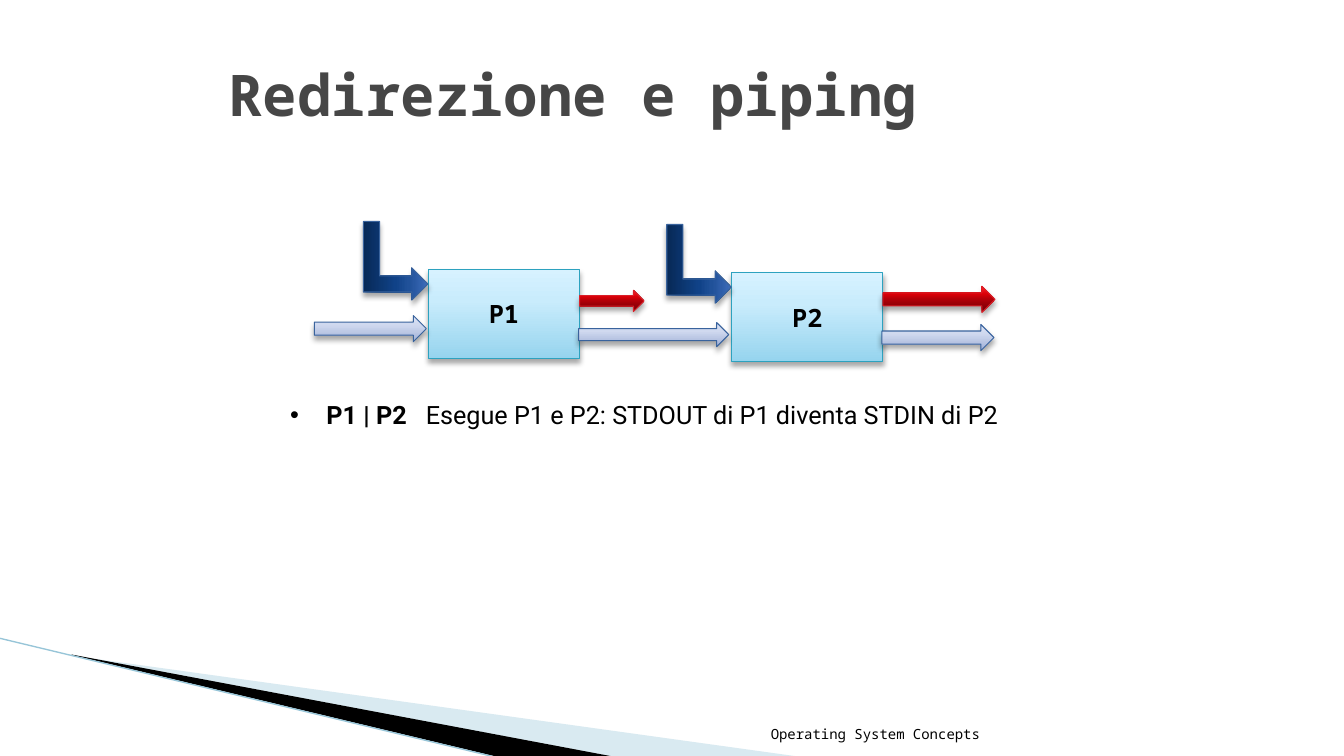
"""Build the slide on redirection and piping between two processes."""
import pptx
import pptx.util
import pptx.dml.color
import pptx.enum.shapes
import pptx.enum.text
import pptx.oxml
import pptx.oxml.ns
from lxml import etree

Pt = pptx.util.Pt
RGB = pptx.dml.color.RGBColor.from_string
qn = pptx.oxml.ns.qn
MSO = pptx.enum.shapes.MSO_SHAPE
ALIGN = pptx.enum.text.PP_ALIGN
ANCHOR = pptx.enum.text.MSO_ANCHOR
MONO = "Noto Sans Mono"
COLORS = {"title": "464646", "text": "000000", "wedge": "A0CBDC", "band": "000000",
          "edge": "97C5D8", "shadow": "000000",
          "box": "2DA2BF", "bent": "39639D", "stream": "39639D", "error": "DA1F28"}
GRADIENTS = {
    "box": [(0, "96D4EE"), (65, "C9ECFC"), (100, "D7F2FF")],
    "bent": [(0, "072956"), (50, "104288"), (70, "205199"), (100, "3D6BB9")],
    "stream": [(0, "9FAFD6"), (65, "D0D9EF"), (100, "DCE3F6")],
    "error": [(0, "6D0005"), (50, "B00008"), (70, "DA0008"), (100, "FF2429")],
}


def add_run(p, text, size, font, color, bold=False):
    r = p.add_run()
    r.text = text
    r.font.size, r.font.name, r.font.bold = Pt(size), font, bold
    r.font.color.rgb = RGB(color)
    return r


def add_part(shapes, preset, style, x, y, w, h):
    sp = shapes.add_shape(preset, Pt(x), Pt(y), Pt(w), Pt(h))
    sp.fill.gradient()
    sp.fill.gradient_angle = 90
    stops = sp._element.spPr.find(".//" + qn("a:gsLst"))
    for old in list(stops):
        stops.remove(old)
    for pos, color in GRADIENTS[style]:
        gs = etree.SubElement(stops, qn("a:gs"), pos=str(pos * 1000))
        etree.SubElement(gs, qn("a:srgbClr"), val=color)
    sp.line.color.rgb = RGB(COLORS[style])
    sp.line.width = Pt(0.75)
    sp.shadow.inherit = False
    effects = sp._element.spPr.find(qn("a:effectLst"))
    shadow = etree.SubElement(effects, qn("a:outerShdw"), blurRad=str(Pt(4)),
                              dist=str(Pt(3)), dir="5400000", rotWithShape="0")
    clr = etree.SubElement(shadow, qn("a:srgbClr"), val=COLORS["shadow"])
    etree.SubElement(clr, qn("a:alpha"), val="35000")
    return sp


prs = pptx.Presentation()
prs.slide_width, prs.slide_height = Pt(960), Pt(540)
s = prs.slides.add_slide(prs.slide_layouts[1])

wedges = [
    ("wedge", [(52.5, 468.5), (571, 540.5), (438, 540.5), (52.5, 468)]),
    ("band", [(51, 467.5), (438.5, 540.5), (357, 541), (52, 468)]),
]
for name, points in wedges:
    points = [(Pt(x), Pt(y)) for x, y in points]
    builder = s.shapes.build_freeform(*points[0])
    builder.add_line_segments(points[1:], close=True)
    sp = builder.convert_to_shape()
    sp.fill.solid()
    sp.fill.fore_color.rgb = RGB(COLORS[name])
    sp.line.fill.background()
    sp.shadow.inherit = False
    if name == "wedge":
        clr = sp._element.spPr.find(".//" + qn("a:srgbClr"))
        etree.SubElement(clr, qn("a:alpha"), val="40000")

edge = s.shapes.add_connector(pptx.enum.shapes.MSO_CONNECTOR.STRAIGHT,
                              Pt(-0.7), Pt(455.8), Pt(356.4), Pt(541.4))
edge.line.color.rgb = RGB(COLORS["edge"])
edge.line.width = Pt(0.95)
etree.SubElement(edge._element.spPr, qn("a:effectLst"))

title = s.shapes.title
title.left, title.top, title.width, title.height = Pt(156), Pt(21.6), Pt(648), Pt(90)
title.text_frame.vertical_anchor = ANCHOR.MIDDLE
p = title.text_frame.paragraphs[0]
p.alignment = ALIGN.LEFT
add_run(p, "Redirezione e piping", 41, MONO, COLORS["title"], True)

footer = s.shapes.add_textbox(Pt(460), Pt(504.7), Pt(247), Pt(28.8))
tf = footer.text_frame
tf.word_wrap = True
tf.vertical_anchor = ANCHOR.BOTTOM
p = tf.paragraphs[0]
p.alignment = ALIGN.RIGHT
add_run(p, "Operating System Concepts", 10, MONO, COLORS["text"])

diagram = s.shapes.add_group_shape().shapes
for label, x, y in [("P1", 306, 192.2), ("P2", 522.7, 194.4)]:
    box = add_part(diagram, MSO.RECTANGLE, "box", x, y, 108, 64)
    tf = box.text_frame
    tf.vertical_anchor = ANCHOR.MIDDLE
    p = tf.paragraphs[0]
    p.alignment = ALIGN.CENTER
    add_run(p, label, 18, MONO, COLORS["text"], True)
    bent = add_part(diagram, MSO.BENT_UP_ARROW, "bent", x - 51.5, y - 29, 56.2, 46.1)
    bent.rotation = 90

arrows = [
    ("stream", 224.6, 225.4, 80, 18.7),
    ("stream", 413.3, 230.4, 107.3, 17.3),
    ("error", 414, 207.4, 46.1, 15.1),
    ("stream", 630, 231.8, 80, 18.7),
    ("error", 630.7, 204.5, 80, 18.7),
]
for style, x, y, w, h in arrows:
    add_part(diagram, MSO.RIGHT_ARROW, style, x, y, w, h)

body = s.placeholders[1]
body.left, body.top, body.width, body.height = Pt(200), Pt(281.5), Pt(533.5), Pt(28.8)
tf = body.text_frame
tf.word_wrap = True
tf.auto_size = pptx.enum.text.MSO_AUTO_SIZE.NONE
p = tf.paragraphs[0]
p.space_before = Pt(0)
pPr = p._p.get_or_add_pPr()
pPr.set("marL", str(Pt(26)))
pPr.set("indent", str(Pt(-26)))
etree.SubElement(pPr, qn("a:buFont"), typeface="Arial")
etree.SubElement(pPr, qn("a:buChar"), char="•")
add_run(p, "P1 | P2", 18, "Roboto", COLORS["text"], True)
gap = add_run(p, " ", 18, "Roboto", COLORS["text"])
gap._r.get_or_add_rPr().set("spc", "900")
add_run(p, "Esegue P1 e P2: STDOUT di P1 diventa STDIN di P2", 18, "Roboto", COLORS["text"])

prs.save("out.pptx")
